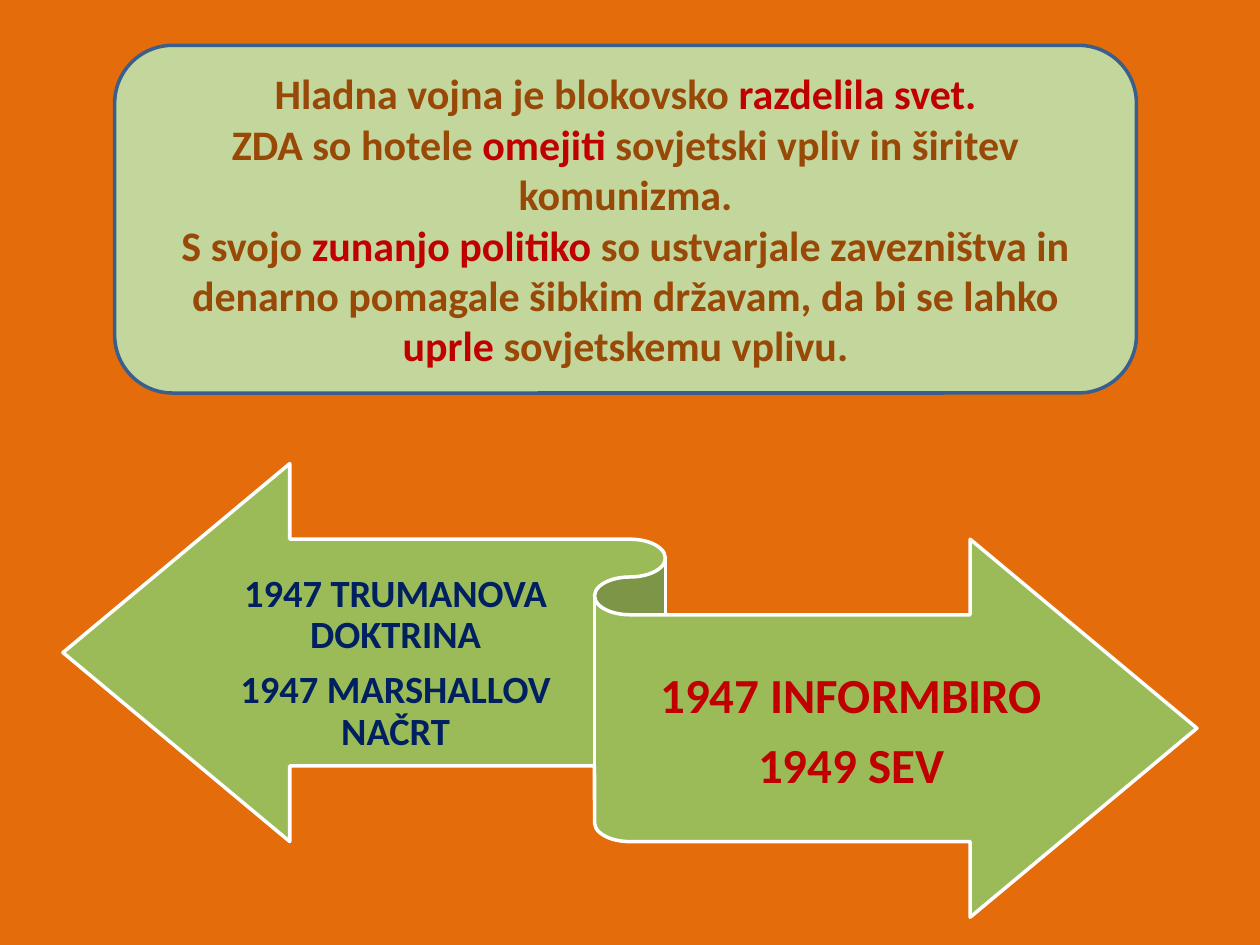
from dataclasses import dataclass

from pptx import Presentation
from pptx.dml.color import RGBColor
from pptx.enum.shapes import MSO_SHAPE
from pptx.enum.text import MSO_ANCHOR, PP_ALIGN
from pptx.shapes.autoshape import Shape
from pptx.slide import Slide
from pptx.text.text import TextFrame
from pptx.util import Inches, Pt

COLORS = {
    "background": "E46C0A",
    "panel": "C3D69B",
    "panel_line": "3A5F8C",
    "ribbon": "9BBB59",
    "ribbon_line": "FFFFFF",
    "body": "984807",
    "emphasis": "C00000",
    "west": "002060",
}


@dataclass(frozen=True)
class Box:
    left: float
    top: float
    width: float
    height: float

    def lengths(self) -> tuple:
        return tuple(Inches(n) for n in (self.left, self.top, self.width, self.height))


@dataclass(frozen=True)
class ArrowLabel:
    box: Box
    inset_top: float
    inset_bottom: float
    size: int
    color: str
    events: tuple[str, ...]


# Each paragraph is a list of (text, colour) pieces.
SUMMARY = [
    [("Hladna vojna je blokovsko ", "body"), ("razdelila svet.", "emphasis")],
    [("ZDA so hotele ", "body"), ("omejiti", "emphasis"),
     (" sovjetski vpliv in širitev komunizma.", "body")],
    [("S svojo ", "body"), ("zunanjo politiko ", "emphasis"),
     ("so ustvarjale zavezništva in denarno pomagale šibkim državam, "
      "da bi se lahko ", "body"),
     ("uprle", "emphasis"), (" sovjetskemu vplivu.", "body")],
]

ARROW_LABELS = [
    ArrowLabel(Box(1.69, 3.97, 2.9, 2.14), 0.55, 0.09, 22, "west",
               ("1947 TRUMANOVA DOKTRINA", "1947 MARSHALLOV NAČRT")),
    ArrowLabel(Box(5, 5.06, 3.51, 1.52), 0.11, 0.12, 28, "emphasis",
               ("1947 INFORMBIRO", "1949 SEV")),
]


def rgb(name: str) -> RGBColor:
    return RGBColor.from_string(COLORS[name])


def add_filled_shape(slide: Slide, kind: MSO_SHAPE, box: Box, fill: str, line: str) -> Shape:
    shape = slide.shapes.add_shape(kind, *box.lengths())
    shape.shadow.inherit = False
    shape.fill.solid()
    shape.fill.fore_color.rgb = rgb(fill)
    shape.line.color.rgb = rgb(line)
    shape.line.width = Pt(2)
    return shape


def write_paragraphs(frame: TextFrame, paragraphs: list, size: int) -> None:
    """Fill the frame with centred bold paragraphs of coloured pieces."""
    frame.word_wrap = True
    frame.vertical_anchor = MSO_ANCHOR.MIDDLE
    frame.text = "\n".join("" for _ in paragraphs)
    for paragraph, pieces in zip(frame.paragraphs, paragraphs):
        paragraph.alignment = PP_ALIGN.CENTER
        for text, color in pieces:
            run = paragraph.add_run()
            run.text = text
            run.font.name = "Calibri"
            run.font.size = Pt(size)
            run.font.bold = True
            run.font.color.rgb = rgb(color)


def add_arrow_label(slide: Slide, label: ArrowLabel) -> None:
    frame = slide.shapes.add_textbox(*label.box.lengths()).text_frame
    frame.margin_left = frame.margin_right = 0
    frame.margin_top = Inches(label.inset_top)
    frame.margin_bottom = Inches(label.inset_bottom)
    write_paragraphs(frame, [[(event, label.color)] for event in label.events], label.size)
    for paragraph in frame.paragraphs:
        paragraph.line_spacing = 0.9
        paragraph.space_after = Pt(0.35 * label.size)


def main() -> None:
    presentation = Presentation()
    presentation.slide_width = Inches(10)
    presentation.slide_height = Inches(7.5)
    slide = presentation.slides.add_slide(presentation.slide_layouts[6])
    slide.background.fill.solid()
    slide.background.fill.fore_color.rgb = rgb("background")

    add_filled_shape(slide, MSO_SHAPE.LEFT_RIGHT_RIBBON, Box(0.5, 3.68, 9, 3.6),
                     "ribbon", "ribbon_line")
    for label in ARROW_LABELS:
        add_arrow_label(slide, label)

    panel = add_filled_shape(slide, MSO_SHAPE.ROUNDED_RECTANGLE, Box(0.91, 0.36, 8.11, 2.76),
                             "panel", "panel_line")
    write_paragraphs(panel.text_frame, SUMMARY, 24)

    presentation.save("out.pptx")


if __name__ == "__main__":
    main()
